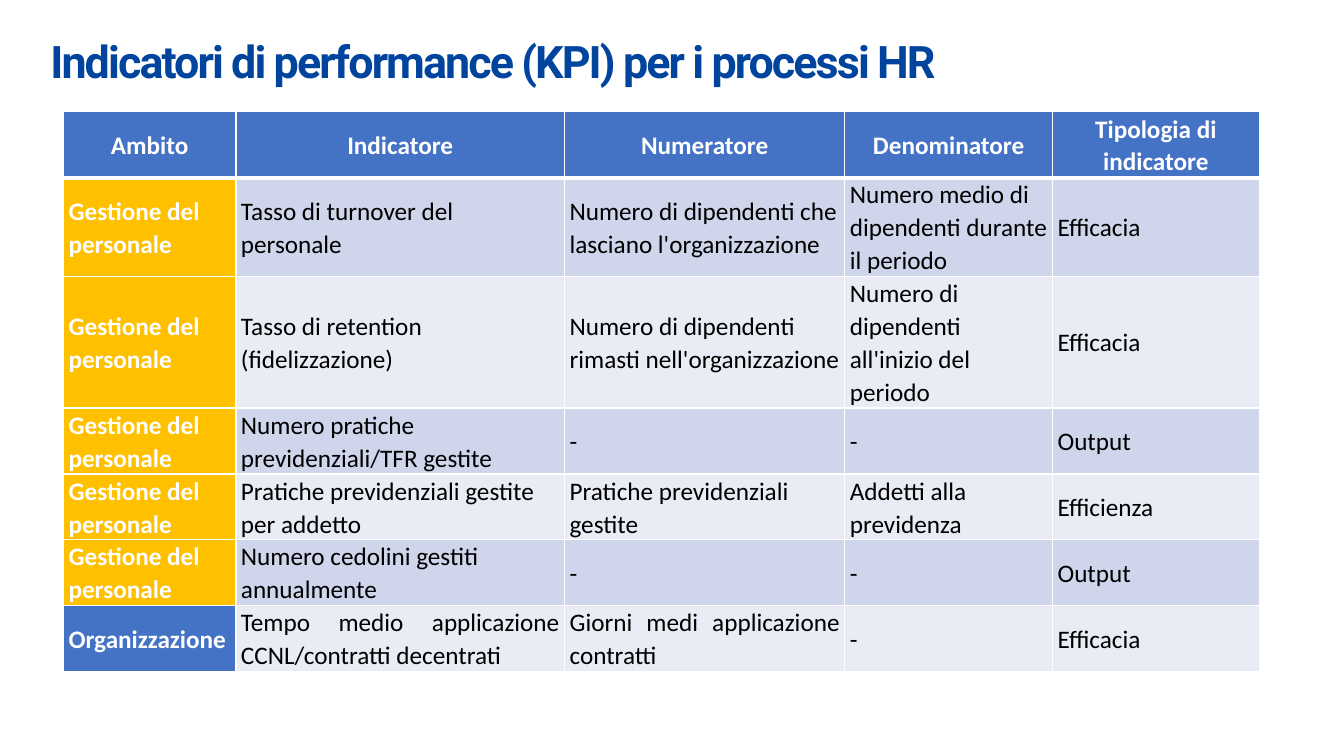
from lxml import etree
from pptx import Presentation
from pptx.dml.color import RGBColor
from pptx.enum.text import MSO_ANCHOR, MSO_AUTO_SIZE, PP_ALIGN
from pptx.oxml.ns import qn
from pptx.util import Inches, Pt

LEFT, CENTER, JUSTIFY = PP_ALIGN.LEFT, PP_ALIGN.CENTER, PP_ALIGN.JUSTIFY
MIDDLE = MSO_ANCHOR.MIDDLE

# Content
TITLE = "Indicatori di performance (KPI) per i processi HR"
STAFF, ORG = "Gestione del personale", "Organizzazione"
ROWS = [
    ("Ambito", "Indicatore", "Numeratore", "Denominatore", "Tipologia di indicatore"),
    (STAFF, "Tasso di turnover del personale",
     "Numero di dipendenti che lasciano l'organizzazione",
     "Numero medio di dipendenti durante il periodo", "Efficacia"),
    (STAFF, "Tasso di retention (fidelizzazione)",
     "Numero di dipendenti rimasti nell'organizzazione",
     "Numero di dipendenti all'inizio del periodo", "Efficacia"),
    (STAFF, "Numero pratiche previdenziali/TFR gestite", "-", "-", "Output"),
    (STAFF, "Pratiche previdenziali gestite per addetto",
     "Pratiche previdenziali gestite", "Addetti alla previdenza", "Efficienza"),
    (STAFF, "Numero cedolini gestiti annualmente", "-", "-", "Output"),
    (ORG, "Tempo medio applicazione CCNL/contratti decentrati",
     "Giorni medi applicazione contratti", "-", "Efficacia"),
]
COL_WIDTHS = [1.71, 3.26, 2.78, 2.06, 2.05]
ROW_HEIGHTS = [0.64, 0.97, 1.3] + [0.64] * 4

BLUE, WHITE, BLACK = "4472C4", "FFFFFF", "000000"
AREA_FILLS = {STAFF: "FFC000", ORG: BLUE}
BANDS = ["E9EBF5", "CFD5EA"]


def rgb(value):
    return RGBColor.from_string(value)


def style_font(font, name, size, color, bold):
    font.name, font.size, font.bold = name, Pt(size), bold
    font.color.rgb = rgb(color)


def add_borders(cell, bottom):
    tcPr = cell._tc.get_or_add_tcPr()
    for side, width in (("L", 1), ("R", 1), ("T", 1), ("B", bottom)):
        ln = etree.SubElement(tcPr, qn("a:ln" + side), w=str(Pt(width)))
        fill = etree.SubElement(ln, qn("a:solidFill"))
        etree.SubElement(fill, qn("a:srgbClr"), val=WHITE)


prs = Presentation()
prs.slide_width, prs.slide_height = Inches(13.33), Inches(7.5)
s = prs.slides.add_slide(prs.slide_layouts[5])

# Title
title = s.shapes.title
title.left, title.top = Inches(0.39), Inches(0.2)
title.width, title.height = Inches(12.55), Inches(0.8)
tf = title.text_frame
tf.text = TITLE
tf.auto_size = MSO_AUTO_SIZE.NONE
tf.vertical_anchor = MIDDLE
p = tf.paragraphs[0]
p.alignment = LEFT
p._p.get_or_add_pPr().set("marL", str(Inches(0.01)))
r = p.runs[0]
style_font(r.font, "Roboto", 32, "00449E", True)
r.font._element.set("spc", "-140")

# Table grid
table = s.shapes.add_table(
    len(ROWS), len(COL_WIDTHS), Inches(0.63), Inches(1.11),
    Inches(sum(COL_WIDTHS)), Inches(sum(ROW_HEIGHTS))).table
for column, width in zip(table.columns, COL_WIDTHS):
    column.width = Inches(width)
for row, height in zip(table.rows, ROW_HEIGHTS):
    row.height = Inches(height)

# Table cells
for i, texts in enumerate(ROWS):
    for j, text in enumerate(texts):
        header, area = i == 0, j == 0
        if header:
            fill, align = BLUE, CENTER
        elif area:
            fill, align = AREA_FILLS[text], LEFT
        else:
            fill = BANDS[i % 2]
            align = JUSTIFY if texts[0] == ORG else LEFT
        strong = header or area

        cell = table.cell(i, j)
        add_borders(cell, 3 if header else 1)
        cell.fill.solid()
        cell.fill.fore_color.rgb = rgb(fill)
        cell.vertical_anchor = MIDDLE
        cell.margin_left = cell.margin_right = Inches(0.05)
        cell.margin_top = cell.margin_bottom = 0
        p = cell.text_frame.paragraphs[0]
        p.text = text
        p.alignment, p.line_spacing, p.space_after = align, 1.07, Pt(6)
        style_font(p.runs[0].font, "Calibri", 18, WHITE if strong else BLACK, strong)

prs.save("out.pptx")
